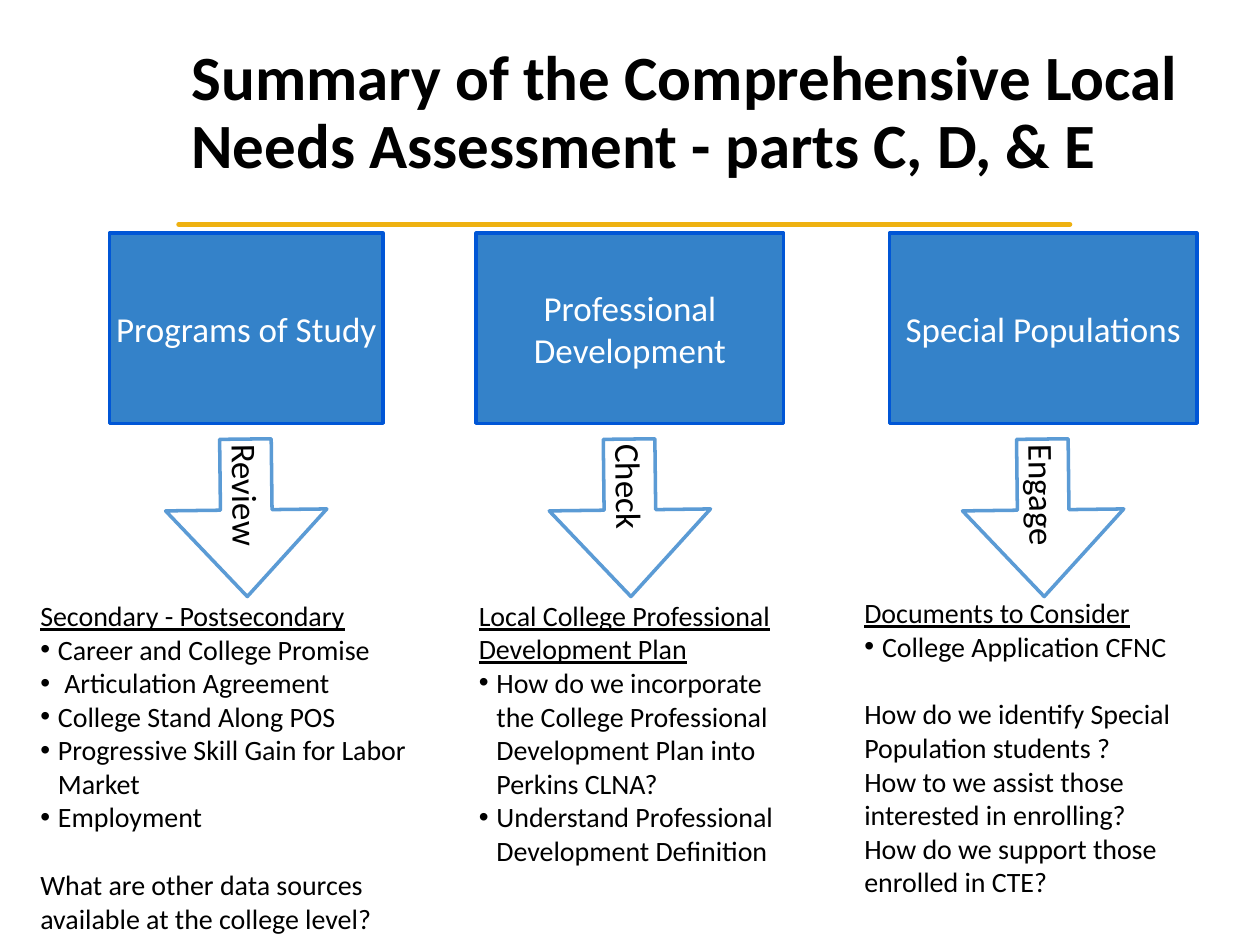
from lxml.etree import SubElement
from pptx import Presentation
from pptx.dml.color import RGBColor
from pptx.enum.shapes import MSO_CONNECTOR, MSO_SHAPE
from pptx.enum.text import MSO_ANCHOR, MSO_AUTO_SIZE, PP_ALIGN
from pptx.oxml.ns import qn
from pptx.util import Inches, Pt

FONT = "Calibri"
BLACK, WHITE = "000000", "FFFFFF"
BOX_FILL, BOX_LINE, ARROW_LINE, RULE = "3482C9", "0056D6", "5B9BD5", "EEB111"

TITLE = "Summary of the Comprehensive Local Needs Assessment - parts C, D, & E"
# box and notes: (left, width) or (left, top, width, height), in inches
COLUMNS = [
    {
        "heading": "Programs of Study", "box": (0.87, 2.17), "action": "Review",
        "notes": (0.28, 4.7, 3.41, 2.77), "topic": "Secondary - Postsecondary",
        "bullets": ["Career and College Promise", " Articulation Agreement",
                    "College Stand Along POS",
                    "Progressive Skill Gain for Labor Market", "Employment"],
        "questions": ["What are other data sources available at the college level?"],
    },
    {
        "heading": "Professional Development", "box": (3.78, 2.44), "action": "Check",
        "notes": (3.76, 4.7, 2.49, 2.23),
        "topic": "Local College Professional Development Plan",
        "bullets": ["How do we incorporate the College Professional Development Plan "
                    "into Perkins CLNA?",
                    "Understand Professional Development Definition"],
        "questions": [],
    },
    {
        "heading": "Special Populations", "box": (7.06, 2.44), "action": "Engage",
        "notes": (6.82, 4.68, 2.94, 2.5), "topic": "Documents to Consider",
        "bullets": ["College Application CFNC"],
        "questions": ["How do we identify Special Population students ?",
                      "How to we assist those interested in enrolling?",
                      "How do we support those enrolled in CTE?"],
    },
]
BOX_TOP, BOX_HEIGHT = 1.85, 1.51
ARROW_TOP, ARROW_LENGTH, ARROW_SPAN = 3.47, 1.25, 1.28
INSET, BULLET_INDENT, LINE_GAP = 0.04, 0.14, 19.5


def color(hex_string):
    return RGBColor.from_string(hex_string)


def prepare_frame(frame):
    frame.word_wrap = True
    frame.vertical_anchor = MSO_ANCHOR.MIDDLE
    frame.margin_left = frame.margin_right = Inches(INSET)
    frame.margin_top = frame.margin_bottom = Inches(INSET)


def write(paragraph, text, size=16, ink=BLACK, bold=False, underline=False,
          align=PP_ALIGN.LEFT, bullet=False, before=0):
    if bullet:
        properties = paragraph._p.get_or_add_pPr()
        properties.set("marL", str(Inches(BULLET_INDENT)))
        properties.set("indent", str(-Inches(BULLET_INDENT)))
        SubElement(properties, qn("a:buFont"), typeface="Arial")
        SubElement(properties, qn("a:buChar"), char="•")
    paragraph.alignment = align
    if before:
        paragraph.space_before = Pt(before)
    run = paragraph.add_run()
    run.text = text
    font = run.font
    font.name, font.size, font.bold, font.underline = FONT, Pt(size), bold, underline
    font.color.rgb = color(ink)


def add_block(slide, kind, bounds, fill, line, text, **text_format):
    shape = slide.shapes.add_shape(kind, *map(Inches, bounds))
    shape.shadow.inherit = False
    shape.fill.solid()
    shape.fill.fore_color.rgb = color(fill)
    shape.line.color.rgb = color(line)
    shape.line.width = Pt(2)
    prepare_frame(shape.text_frame)
    write(shape.text_frame.paragraphs[0], text, size=20, **text_format)
    return shape


def add_notes(slide, column):
    frame = slide.shapes.add_textbox(*map(Inches, column["notes"])).text_frame
    prepare_frame(frame)
    frame.auto_size = MSO_AUTO_SIZE.SHAPE_TO_FIT_TEXT
    write(frame.paragraphs[0], column["topic"], underline=True)
    for text in column["bullets"]:
        write(frame.add_paragraph(), text, bullet=True)
    for index, text in enumerate(column["questions"]):
        write(frame.add_paragraph(), text, before=0 if index else LINE_GAP)


def add_column(slide, column):
    left, width = column["box"]
    add_block(slide, MSO_SHAPE.RECTANGLE, (left, BOX_TOP, width, BOX_HEIGHT),
              BOX_FILL, BOX_LINE, column["heading"], ink=WHITE, align=PP_ALIGN.CENTER)
    add_notes(slide, column)
    arrow_left = left + (width - ARROW_LENGTH) / 2
    arrow = add_block(slide, MSO_SHAPE.RIGHT_ARROW,
                      (arrow_left, ARROW_TOP, ARROW_LENGTH, ARROW_SPAN),
                      WHITE, ARROW_LINE, column["action"])
    arrow.rotation = 89.3
    arrow.adjustments[0], arrow.adjustments[1] = 0.32, 0.55


def add_rule(slide):
    rule = slide.shapes.add_connector(
        MSO_CONNECTOR.STRAIGHT, *map(Inches, (1.42, 1.78, 8.49, 1.78)))
    rule.line.color.rgb = color(RULE)
    rule.line.width = Pt(3)
    rule.line._get_or_add_ln().set("cap", "rnd")
    SubElement(rule._element.spPr, qn("a:effectLst"))


def add_title(slide):
    title = slide.shapes.title
    title.left, title.top, title.width, title.height = map(Inches, (1.42, 0.18, 8.05, 1.45))
    frame = title.text_frame
    frame.word_wrap = True
    frame.auto_size = MSO_AUTO_SIZE.NONE
    frame.vertical_anchor = MSO_ANCHOR.MIDDLE
    frame.paragraphs[0].line_spacing = 0.9
    write(frame.paragraphs[0], TITLE, size=36, bold=True)


def main():
    presentation = Presentation()
    presentation.slide_width, presentation.slide_height = Inches(10), Inches(7.5)
    slide = presentation.slides.add_slide(presentation.slide_layouts[5])
    add_rule(slide)
    add_title(slide)
    for column in COLUMNS:
        add_column(slide, column)
    presentation.save("out.pptx")


if __name__ == "__main__":
    main()
